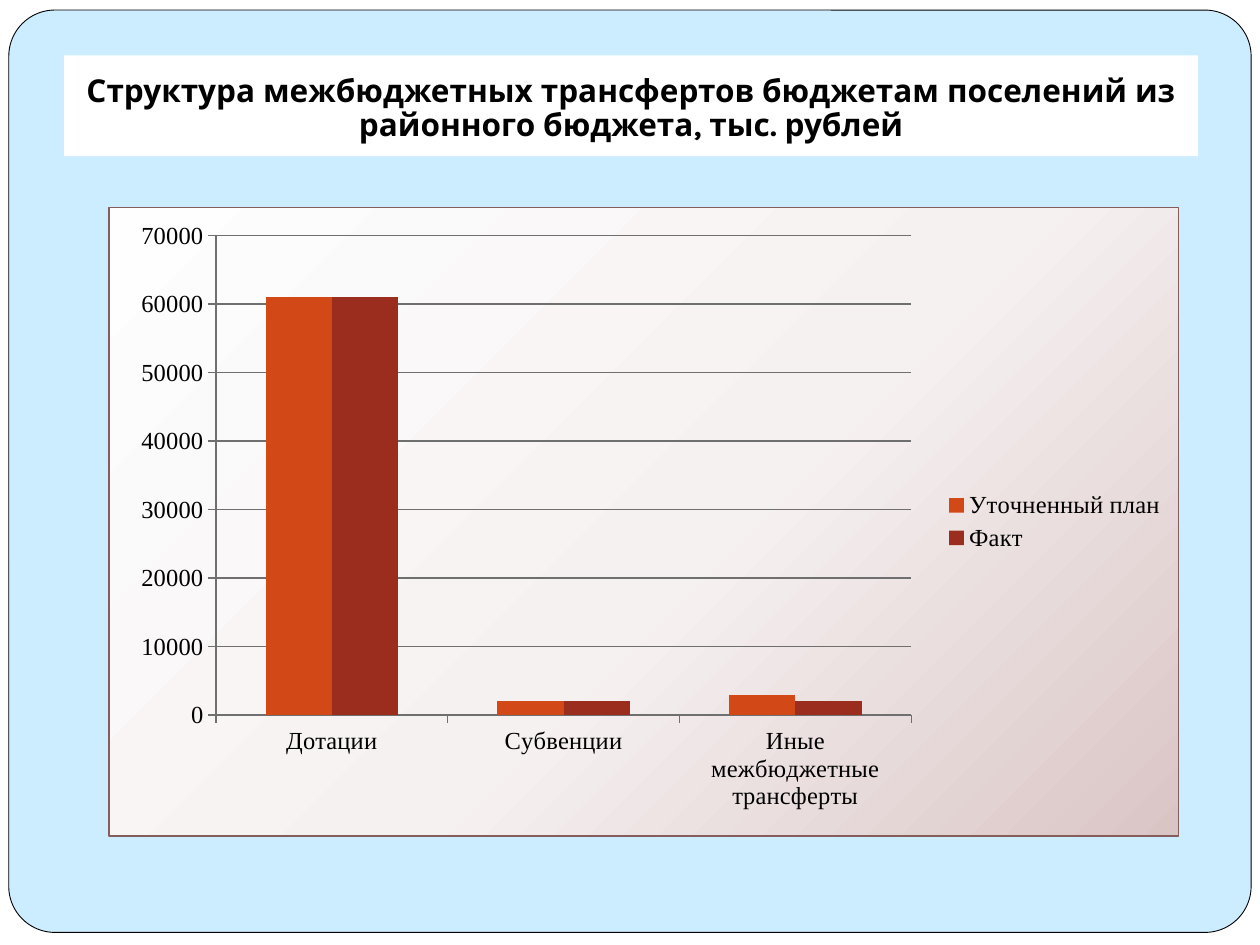
from lxml.etree import SubElement
from pptx import Presentation
from pptx.chart.data import CategoryChartData
from pptx.dml.color import RGBColor
from pptx.enum.chart import XL_CHART_TYPE, XL_LEGEND_POSITION, XL_TICK_MARK
from pptx.enum.shapes import MSO_SHAPE
from pptx.enum.text import MSO_ANCHOR, PP_ALIGN
from pptx.oxml import parse_xml
from pptx.oxml.ns import nsdecls, qn
from pptx.util import Inches, Pt

THEME = {
    "sky": RGBColor.from_string("CCECFF"),
    "white": RGBColor.from_string("FFFFFF"),
    "ink": RGBColor.from_string("000000"),
    "grid": RGBColor.from_string("6F6F6F"),
    "series": [RGBColor.from_string("D34817"), RGBColor.from_string("9B2D1F")],
    "panel": [(0, "FEFEFE"), (55, "F6F1F1"), (100, "DAC5C5")],
    "panel_border": "855D5D",
    "title_font": "Karla",
    "chart_font": "Times New Roman",
    "title_size": Pt(18),
    "chart_size": Pt(14),
}

deck = Presentation()
deck.slide_width, deck.slide_height = Inches(10), Inches(7.5)
slide = deck.slides.add_slide(deck.slide_layouts[6])
slide.background.fill.solid()
slide.background.fill.fore_color.rgb = THEME["sky"]


def add_block(preset, box, color):
    block = slide.shapes.add_shape(preset, *map(Inches, box))
    block.shadow.inherit = False
    block.fill.solid()
    block.fill.fore_color.rgb = color
    block.line.fill.background()
    return block


add_block(MSO_SHAPE.RECTANGLE, (0, 0, 10, 7.5), THEME["white"])
frame = add_block(MSO_SHAPE.ROUNDED_RECTANGLE, (0.07, 0.08, 9.86, 7.32), THEME["sky"])
frame.adjustments[0] = 0.05
frame.line.color.rgb = THEME["ink"]
frame.line.width = Pt(0.5)

title = add_block(MSO_SHAPE.RECTANGLE, (0.51, 0.44, 9, 0.8), THEME["white"]).text_frame
title.word_wrap = True
title.vertical_anchor = MSO_ANCHOR.BOTTOM
title.margin_bottom = Inches(0.1)
title.text = "Структура межбюджетных трансфертов бюджетам поселений из районного бюджета, тыс. рублей"
heading = title.paragraphs[0]
heading.alignment = PP_ALIGN.CENTER
heading.line_spacing = 0.9
heading.font.name = THEME["title_font"]
heading.font.size = THEME["title_size"]
heading.font.bold = True
heading.font.color.rgb = THEME["ink"]

transfers = CategoryChartData(number_format="General")
transfers.categories = ["Дотации", "Субвенции", "Иные межбюджетные трансферты"]
transfers.add_series("Уточненный план", [61000, 2000, 3000])
transfers.add_series("Факт", [61000, 2000, 2000])
chart = slide.shapes.add_chart(
    XL_CHART_TYPE.COLUMN_CLUSTERED, *map(Inches, (0.86, 1.64, 8.5, 5)), transfers
).chart
chart.has_title = False
chart.font.name = THEME["chart_font"]
chart.font.size = THEME["chart_size"]
chart.font.color.rgb = THEME["ink"]
chart.has_legend = True
chart.legend.position = XL_LEGEND_POSITION.RIGHT
chart.legend.include_in_layout = False

columns = chart.plots[0]
columns.gap_width = 150
columns.overlap = 0
columns.vary_by_categories = False
for series, color in zip(columns.series, THEME["series"]):
    series.format.fill.solid()
    series.format.fill.fore_color.rgb = color
    series.invert_if_negative = False

amounts = chart.value_axis
amounts.minimum_scale, amounts.maximum_scale, amounts.major_unit = 0, 70000, 10000
amounts.has_major_gridlines = True
chart.category_axis.has_major_gridlines = False
for axis in (amounts, chart.category_axis):
    axis.major_tick_mark = XL_TICK_MARK.OUTSIDE
    axis.minor_tick_mark = XL_TICK_MARK.NONE
for ruled in (amounts, chart.category_axis, amounts.major_gridlines):
    ruled.format.line.color.rgb = THEME["grid"]
    ruled.format.line.width = Pt(0.75)

plot_area = chart._chartSpace.chart.plotArea
for automatic in plot_area.findall(qn("c:layout")):
    plot_area.remove(automatic)
layout = parse_xml(f"<c:layout {nsdecls('c')}><c:manualLayout/></c:layout>")
placement = {
    "layoutTarget": "inner", "xMode": "edge", "yMode": "edge",
    "x": 0.1, "y": 0.045, "w": 0.65, "h": 0.763,
}
for part, value in placement.items():
    SubElement(layout[0], qn(f"c:{part}")).set("val", str(value))
plot_area.insert(0, layout)

stops = "".join(
    f'<a:gs pos="{share * 1000}"><a:srgbClr val="{color}"/></a:gs>'
    for share, color in THEME["panel"]
)
chart._chartSpace.chart.addnext(parse_xml(
    f'<c:spPr {nsdecls("c", "a")}><a:gradFill><a:gsLst>{stops}</a:gsLst>'
    '<a:path path="circle"><a:fillToRect l="-40000" t="-90000" r="140000" b="190000"/></a:path>'
    f'</a:gradFill><a:ln w="{Pt(0.75)}"><a:solidFill><a:srgbClr val="{THEME["panel_border"]}"/>'
    "</a:solidFill></a:ln></c:spPr>"
))

deck.save("out.pptx")
